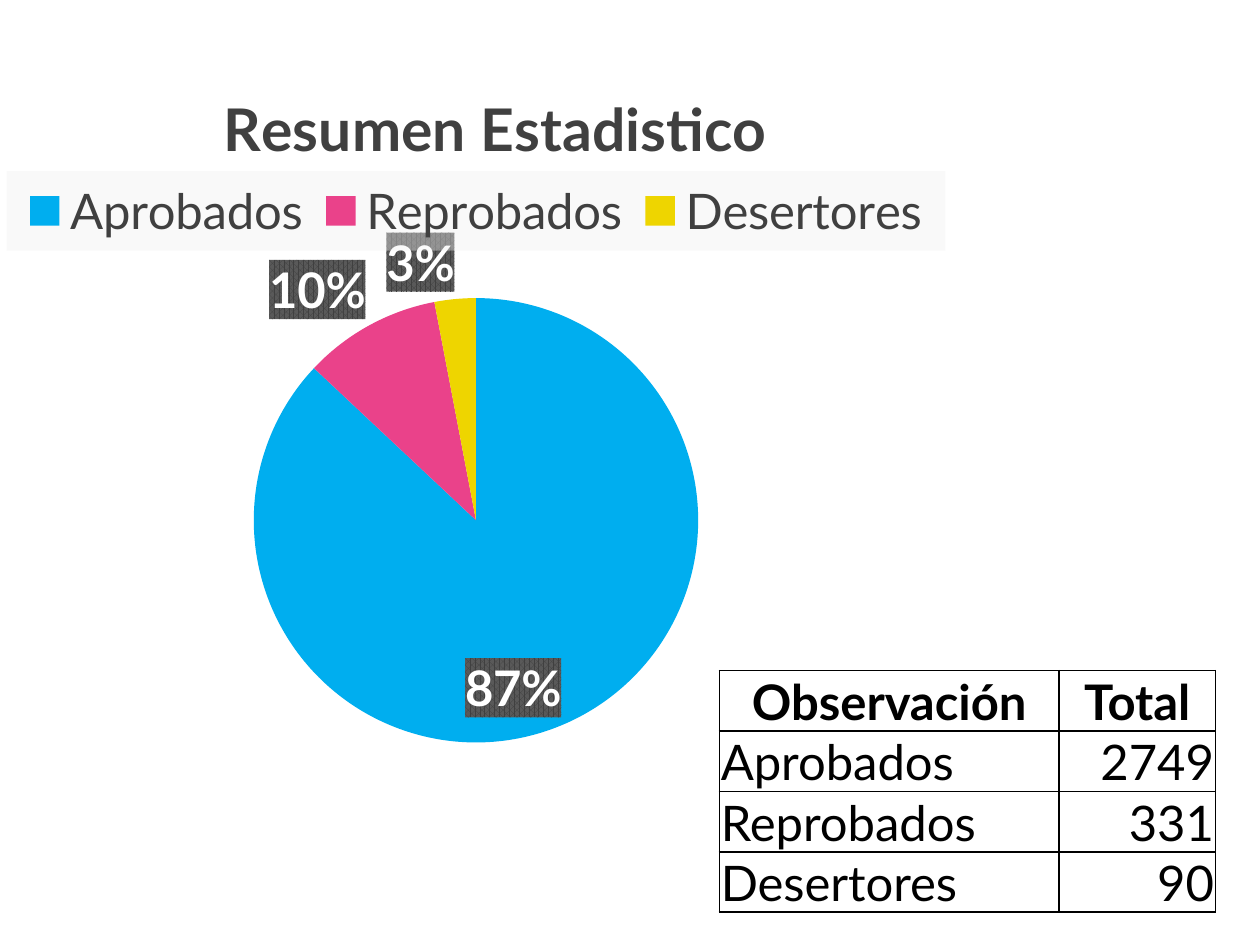
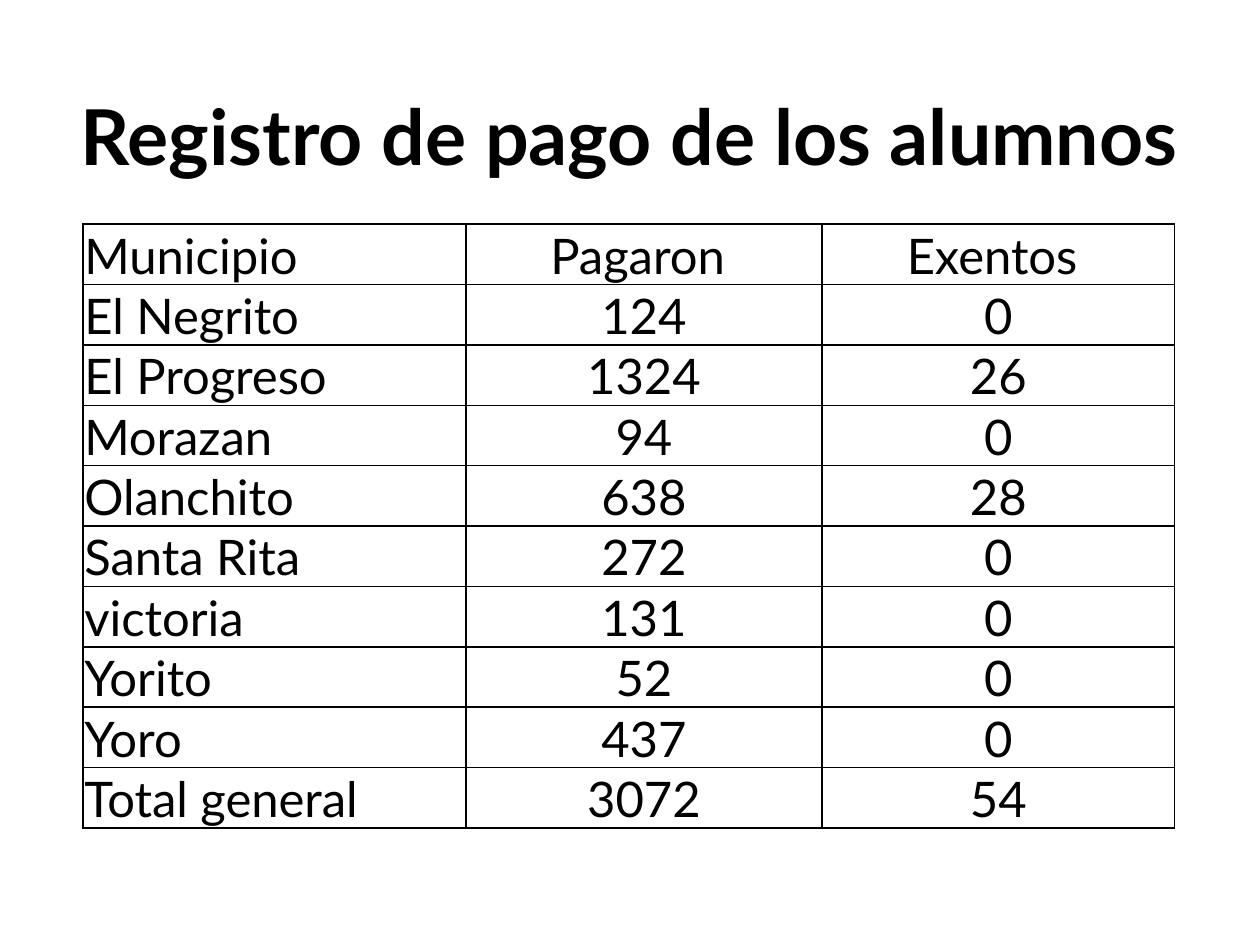
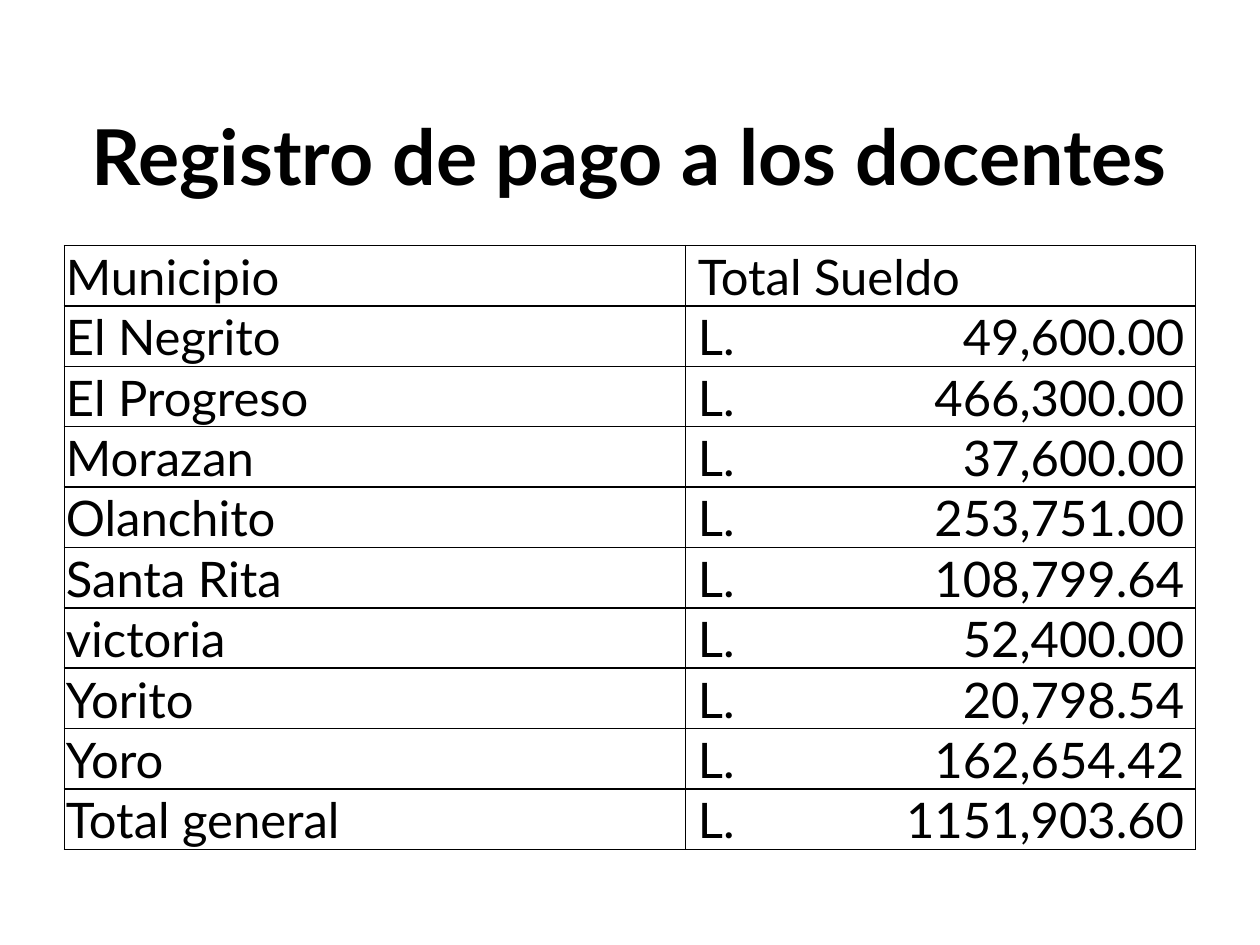
import copy

import pptx
import pptx.chart.data
import pptx.dml.color
import pptx.enum.chart
import pptx.enum.text
import pptx.oxml
import pptx.oxml.ns
import pptx.util
from lxml import etree
from pptx.util import Cm

FONT = "Lato"
BLACK = "000000"
WHITE = "FFFFFF"
GRAY = "404040"
SLICES = {"Aprobados": (87, "00AEEF"), "Reprobados": (10, "EA428A"), "Desertores": (3, "EED500")}
BODY_SIZE = 28
ROW_HEIGHT = Cm(1.21)
INSET = Cm(0.03)
SALARY_INSET = Cm(0.25)
SALARY_TAB = Cm(9.8)
NAMESPACES = pptx.oxml.ns.nsdecls("a", "c")
LEFT = pptx.enum.text.PP_ALIGN.LEFT
CENTER = pptx.enum.text.PP_ALIGN.CENTER
RIGHT = pptx.enum.text.PP_ALIGN.RIGHT
MIDDLE = pptx.enum.text.MSO_ANCHOR.MIDDLE
BOTTOM = pptx.enum.text.MSO_ANCHOR.BOTTOM

TOTALS = [("Observación", "Total"), ("Aprobados", "2749"), ("Reprobados", "331"), ("Desertores", "90")]
STUDENTS = [
    ("Municipio", "Pagaron ", "Exentos "),
    ("El Negrito", "124", "0"),
    ("El Progreso", "1324", "26"),
    ("Morazan", "94", "0"),
    ("Olanchito", "638", "28"),
    ("Santa Rita", "272", "0"),
    ("victoria", "131", "0"),
    ("Yorito", "52", "0"),
    ("Yoro", "437", "0"),
    ("Total general", "3072", "54"),
]
SALARIES = [
    ("Municipio", "Total Sueldo"),
    ("El Negrito", "L.\t49,600.00"),
    ("El Progreso", "L.\t466,300.00"),
    ("Morazan", "L.\t37,600.00"),
    ("Olanchito", "L.\t253,751.00"),
    ("Santa Rita", "L.\t108,799.64"),
    ("victoria", "L.\t52,400.00"),
    ("Yorito", "L.\t20,798.54"),
    ("Yoro", "L.\t162,654.42"),
    ("Total general", "L.\t1151,903.60"),
]


def rgb(value):
    return pptx.dml.color.RGBColor.from_string(value)


def style_font(font, size, color, bold=False):
    font.name = FONT
    font.size = pptx.util.Pt(size)
    font.bold = bold
    font.color.rgb = rgb(color)


def add_title(page, text, left, top, width, height):
    box = page.shapes.add_textbox(left, top, width, height)
    frame = box.text_frame
    frame.word_wrap = True
    frame.vertical_anchor = BOTTOM
    frame.text = text
    para = frame.paragraphs[0]
    para.alignment = CENTER
    para.line_spacing = 0.8
    style_font(para.runs[0].font, 44, BLACK, True)


def add_borders(cell):
    properties = cell._tc.get_or_add_tcPr()
    for position, side in enumerate(("lnL", "lnR", "lnT", "lnB")):
        line = pptx.oxml.parse_xml(
            f'<a:{side} {NAMESPACES} w="12700"><a:solidFill><a:srgbClr val="{BLACK}"/>'
            f"</a:solidFill></a:{side}>"
        )
        properties.insert(position, line)


def add_right_tab(para, position):
    properties = para._p.get_or_add_pPr()
    properties.append(pptx.oxml.parse_xml(
        f'<a:tabLst {NAMESPACES}><a:tab pos="{position}" algn="r"/></a:tabLst>'
    ))


def fill_cell(cell, text, alignment, left_inset, bold=False, anchor=BOTTOM):
    cell.fill.background()
    add_borders(cell)
    cell.margin_left = left_inset
    cell.margin_right = cell.margin_top = INSET
    cell.margin_bottom = 0
    cell.vertical_anchor = anchor
    cell.text_frame.text = text
    para = cell.text_frame.paragraphs[0]
    para.alignment = alignment
    if "\t" in text:
        add_right_tab(para, SALARY_TAB)
    style_font(para.runs[0].font, BODY_SIZE, BLACK, bold)


def add_grid(page, left, top, rows, columns, bold_header=False):
    width = sum(column[0] for column in columns)
    frame = page.shapes.add_table(len(rows), len(columns), left, top, width, ROW_HEIGHT * len(rows))
    table = frame.table
    table.first_row = table.horz_banding = False
    for column, (column_width, _, _) in zip(table.columns, columns):
        column.width = column_width
    for row_index, texts in enumerate(rows):
        table.rows[row_index].height = ROW_HEIGHT
        header = bold_header and row_index == 0
        for column_index, (text, (_, alignment, inset)) in enumerate(zip(texts, columns)):
            fill_cell(table.cell(row_index, column_index), text,
                      CENTER if header else alignment, inset,
                      header, MIDDLE if header else BOTTOM)


def manual_layout(x, y, width=None, height=None, target=""):
    modes = "".join(f'<c:{axis}Mode val="edge"/>' for axis in "xy")
    sizes = {"x": x, "y": y, "w": width, "h": height}
    values = "".join(f'<c:{key} val="{value}"/>' for key, value in sizes.items() if value is not None)
    return pptx.oxml.parse_xml(
        f"<c:layout {NAMESPACES}><c:manualLayout>{target}{modes}{values}</c:manualLayout></c:layout>"
    )


def place(element, layout, anchor_tag=None):
    for old in element.findall(pptx.oxml.ns.qn("c:layout")):
        element.remove(old)
    anchor = element.find(pptx.oxml.ns.qn(anchor_tag)) if anchor_tag else None
    if anchor is None:
        element.insert(0, layout)
    else:
        anchor.addnext(layout)


def style_labels(series):
    labels = series.data_labels
    labels.show_percentage = True
    labels.show_value = False
    labels.number_format = "0%"
    labels.number_format_is_linked = False
    labels.position = pptx.enum.chart.XL_LABEL_POSITION.OUTSIDE_END
    style_font(labels.font, BODY_SIZE, WHITE, True)
    element = labels._element
    element.find(pptx.oxml.ns.qn("c:numFmt")).addnext(pptx.oxml.parse_xml(
        f'<c:spPr {NAMESPACES}><a:pattFill prst="pct75"><a:fgClr><a:srgbClr val="{GRAY}"/></a:fgClr>'
        '<a:bgClr><a:srgbClr val="595959"/></a:bgClr></a:pattFill></c:spPr>'
    ))
    inner = etree.SubElement(element, pptx.oxml.ns.qn("c:dLbl"))
    etree.SubElement(inner, pptx.oxml.ns.qn("c:idx")).set("val", "0")
    for child in element:
        if child is not inner and child.tag != pptx.oxml.ns.qn("c:showLeaderLines"):
            inner.append(copy.deepcopy(child))
    inner.find(pptx.oxml.ns.qn("c:dLblPos")).set("val", "inEnd")
    element.insert(0, inner)


def style_legend(chart):
    chart.has_legend = True
    legend = chart.legend
    legend.position = pptx.enum.chart.XL_LEGEND_POSITION.TOP
    legend.include_in_layout = False
    style_font(legend.font, BODY_SIZE, GRAY)
    element = legend._element
    place(element, manual_layout(0.04, 0.17, 0.91, 0.1), "c:legendPos")
    element.find(pptx.oxml.ns.qn("c:txPr")).addprevious(pptx.oxml.parse_xml(
        f'<c:spPr {NAMESPACES}><a:solidFill><a:srgbClr val="F2F2F2"><a:alpha val="39000"/>'
        "</a:srgbClr></a:solidFill></c:spPr>"
    ))


def add_pie(page, left, top, width, height):
    data = pptx.chart.data.CategoryChartData()
    data.categories = list(SLICES)
    data.add_series("Series 1", [value for value, _ in SLICES.values()])
    kind = pptx.enum.chart.XL_CHART_TYPE.PIE
    chart = page.shapes.add_chart(kind, left, top, width, height, data).chart
    style_font(chart.font, BODY_SIZE, BLACK)
    chart.has_title = True
    title = chart.chart_title
    title.text_frame.text = "Resumen Estadistico"
    style_font(title.text_frame.paragraphs[0].runs[0].font, 33.6, GRAY, True)
    place(title._element, manual_layout(0.24, 0.05), "c:tx")
    plot = chart.plots[0]
    plot.vary_by_categories = True
    series = plot.series[0]
    for index, (_, color) in enumerate(SLICES.values()):
        fill = series.points[index].format.fill
        fill.solid()
        fill.fore_color.rgb = rgb(color)
    style_labels(series)
    style_legend(chart)
    area = chart._chartSpace.chart.plotArea
    place(area, manual_layout(0.1, 0.33, 0.79, 0.56, '<c:layoutTarget val="inner"/>'))


def build_summary(page):
    add_grid(page, Cm(14.5), Cm(13.52), TOTALS,
             [(Cm(6.85), LEFT, INSET), (Cm(3.15), RIGHT, INSET)], True)
    add_pie(page, Cm(-0.7), Cm(0.73), Cm(20.8), Cm(16))


def build_register(page, title, title_top, left, top, rows, columns):
    add_title(page, title, Cm(0.72), title_top, Cm(23.95), Cm(5.24))
    add_grid(page, left, top, rows, columns)


def main():
    deck = pptx.Presentation()
    deck.slide_width = Cm(25.4)
    deck.slide_height = Cm(19.05)
    summary, students, teachers = [deck.slides.add_slide(deck.slide_layouts[6]) for _ in range(3)]
    build_summary(summary)
    build_register(students, "Registro de pago de los alumnos", Cm(-1.48), Cm(1.67), Cm(4.52), STUDENTS,
                   [(Cm(7.72), LEFT, INSET), (Cm(7.18), CENTER, INSET), (Cm(7.11), CENTER, INSET)])
    build_register(teachers, "Registro de pago a los docentes", Cm(-1.07), Cm(1.3), Cm(4.95), SALARIES,
                   [(Cm(12.52), LEFT, INSET), (Cm(10.28), LEFT, SALARY_INSET)])
    deck.save("out.pptx")


if __name__ == "__main__":
    main()
